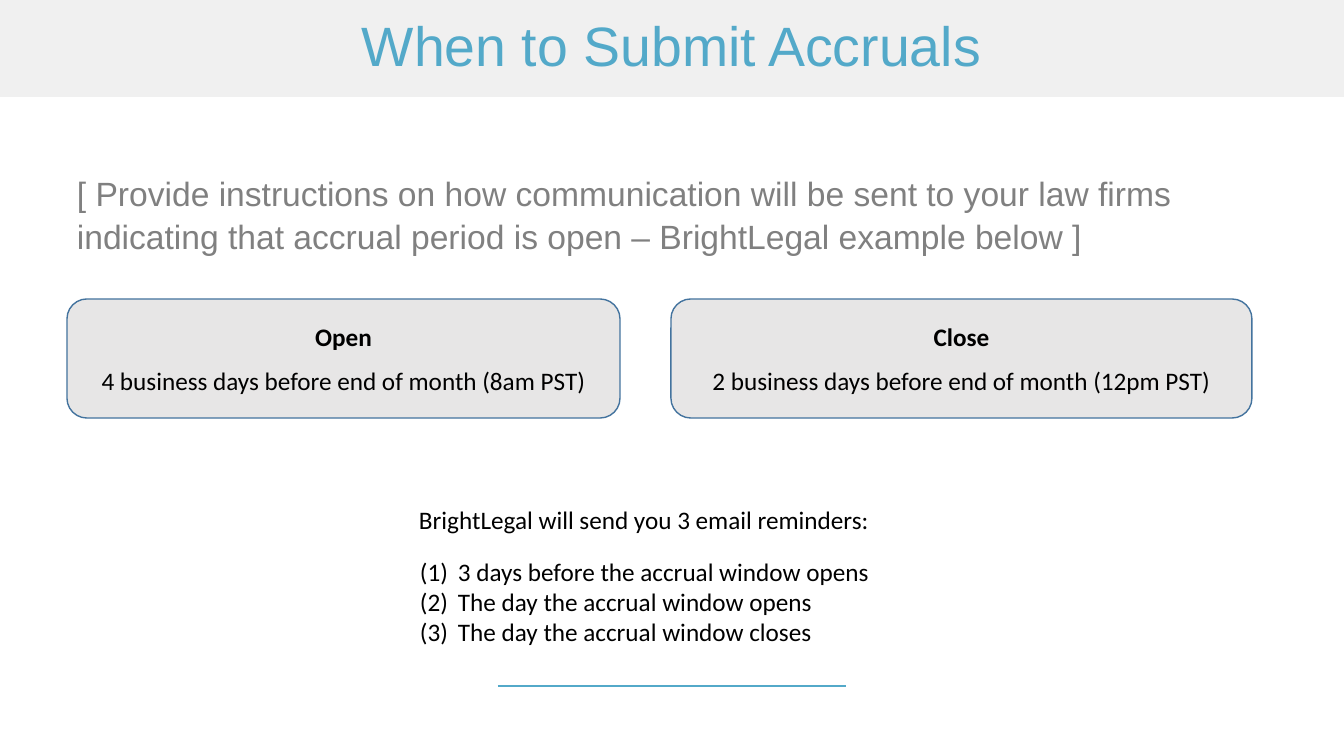
from dataclasses import dataclass

from lxml.etree import SubElement
from pptx import Presentation
from pptx.dml.color import RGBColor
from pptx.enum.shapes import MSO_CONNECTOR, MSO_SHAPE
from pptx.enum.text import MSO_ANCHOR, PP_ALIGN
from pptx.oxml.ns import qn
from pptx.shapes.autoshape import Shape
from pptx.slide import Slide
from pptx.text.text import TextFrame
from pptx.util import Emu, Pt

EMU_PER_PX = 914400 / 100.8
COLORS = {
    "accent": "53A9C9",
    "band": "F0F0F0",
    "prompt": "808080",
    "card": "E7E6E6",
    "card_line": "43739E",
    "ink": "000000",
}
REMINDERS = (
    "3 days before the accrual window opens",
    "The day the accrual window opens",
    "The day the accrual window closes",
)


@dataclass(frozen=True)
class Area:
    left: int
    top: int
    width: int
    height: int


@dataclass(frozen=True)
class DeadlineCard:
    heading: str
    deadline: str
    left: int
    width: int


CARDS = (
    DeadlineCard("Open", "4 business days before end of month (8am PST)", 67, 553),
    DeadlineCard("Close", "2 business days before end of month (12pm PST)", 671, 581),
)


def px(length: int) -> Emu:
    return Emu(round(length * EMU_PER_PX))


def rgb(name: str) -> RGBColor:
    return RGBColor.from_string(COLORS[name])


def write(frame: TextFrame, text: str, *, size: float = 18, font: str = "Calibri",
          color: str = "ink", bold: bool = False, align: PP_ALIGN = PP_ALIGN.LEFT,
          spacing: float = 1.0, before: int = 0, number_indent: int = 0) -> None:
    para = frame.paragraphs[0]
    if para.runs:
        para = frame.add_paragraph()
    if number_indent:
        properties = para._p.get_or_add_pPr()
        properties.set("marL", str(px(number_indent)))
        properties.set("indent", str(-px(number_indent)))
        SubElement(properties, qn("a:buFont"), typeface="+mj-lt")
        SubElement(properties, qn("a:buAutoNum"), type="arabicParenBoth")
    para.alignment = align
    para.line_spacing = spacing
    if before:
        para.space_before = Pt(before)
    span = para.add_run()
    span.text = text
    span.font.size = Pt(size)
    span.font.name = font
    span.font.bold = bold
    span.font.color.rgb = rgb(color)


def add_text_frame(page: Slide, area: Area, *, wrap: bool = True,
                   anchor: MSO_ANCHOR = MSO_ANCHOR.TOP) -> TextFrame:
    box = page.shapes.add_textbox(px(area.left), px(area.top), px(area.width), px(area.height))
    frame = box.text_frame
    frame.word_wrap = wrap
    frame.vertical_anchor = anchor
    return frame


def add_panel(page: Slide, kind: MSO_SHAPE, area: Area, fill: str, line: str = "") -> Shape:
    panel = page.shapes.add_shape(kind, px(area.left), px(area.top), px(area.width), px(area.height))
    panel.shadow.inherit = False
    panel.fill.solid()
    panel.fill.fore_color.rgb = rgb(fill)
    if line:
        panel.line.color.rgb = rgb(line)
        panel.line.width = Pt(1)
    else:
        panel.line.fill.background()
    return panel


def add_footer_rule(page: Slide) -> None:
    rule = page.shapes.add_connector(MSO_CONNECTOR.STRAIGHT, px(498), px(686), px(846), px(686))
    rule.line.color.rgb = rgb("accent")
    rule.line.width = Pt(1.5)
    SubElement(rule._element.spPr, qn("a:effectLst"))


def add_card(page: Slide, card: DeadlineCard) -> None:
    area = Area(card.left, 299, card.width, 119)
    frame = add_panel(page, MSO_SHAPE.ROUNDED_RECTANGLE, area, "card", "card_line").text_frame
    frame.word_wrap = True
    frame.vertical_anchor = MSO_ANCHOR.MIDDLE
    write(frame, card.heading, bold=True, align=PP_ALIGN.CENTER)
    write(frame, card.deadline, align=PP_ALIGN.CENTER, before=10)


def main() -> None:
    deck = Presentation()
    deck.slide_width, deck.slide_height = px(1344), px(756)
    page = deck.slides.add_slide(deck.slide_layouts[6])

    add_footer_rule(page)
    add_panel(page, MSO_SHAPE.RECTANGLE, Area(0, 0, 1344, 97), "band")

    title = add_text_frame(page, Area(92, 12, 1159, 74), anchor=MSO_ANCHOR.MIDDLE)
    write(title, "When to Submit Accruals", size=39.6, font="Arial", color="accent",
          align=PP_ALIGN.CENTER, spacing=0.9)

    prompt = add_text_frame(page, Area(67, 165, 1184, 463))
    write(prompt, "[ Provide instructions on how communication will be sent to your law firms "
          "indicating that accrual period is open – BrightLegal example below ]",
          size=24, font="Arial", color="prompt", spacing=1.07)

    for card in CARDS:
        add_card(page, card)

    intro = add_text_frame(page, Area(402, 499, 484, 40), wrap=False)
    write(intro, "BrightLegal will send you 3 email reminders:", align=PP_ALIGN.CENTER)

    reminders = add_text_frame(page, Area(410, 551, 475, 102), wrap=False)
    for reminder in REMINDERS:
        write(reminders, reminder, number_indent=38)

    deck.save("out.pptx")


if __name__ == "__main__":
    main()
